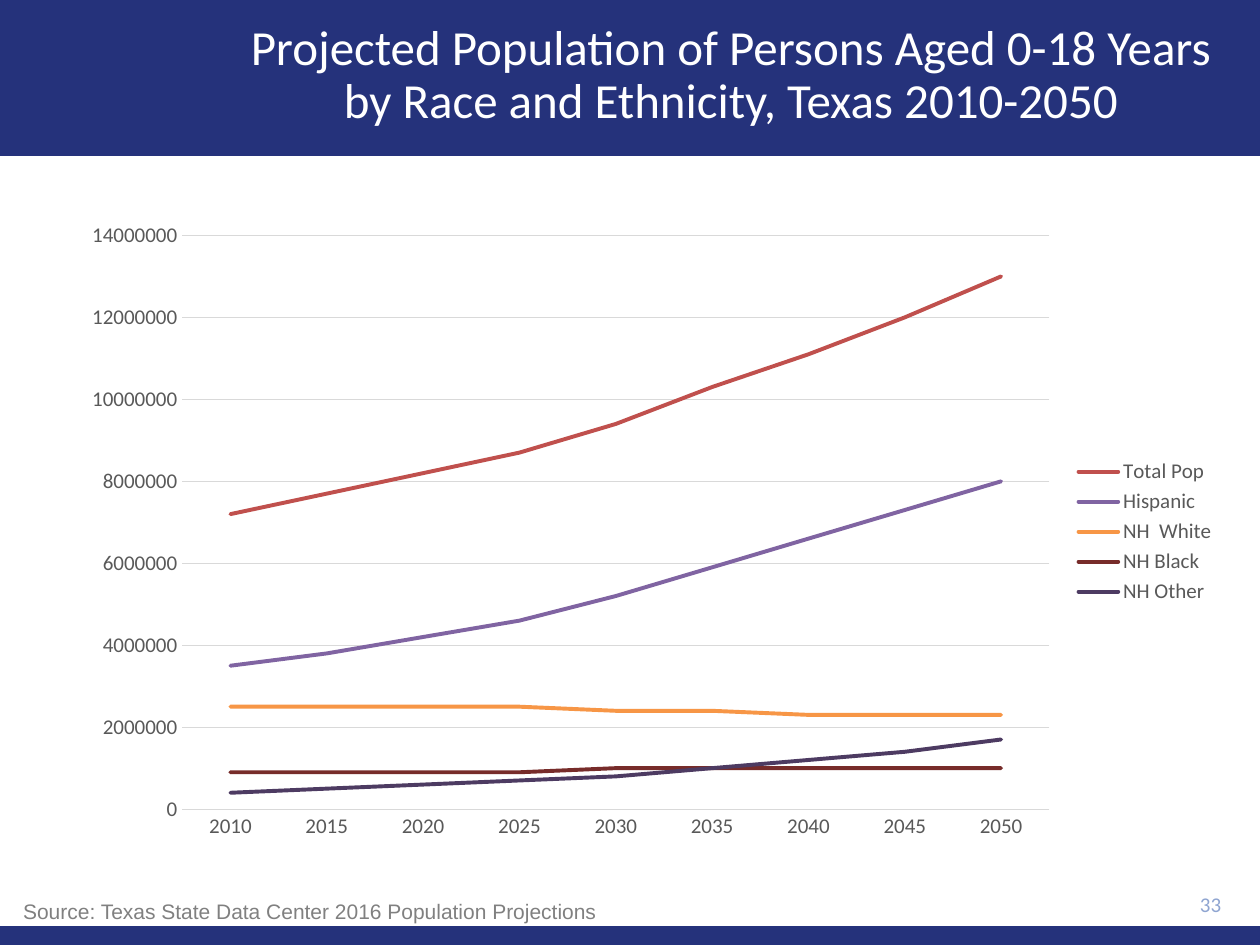
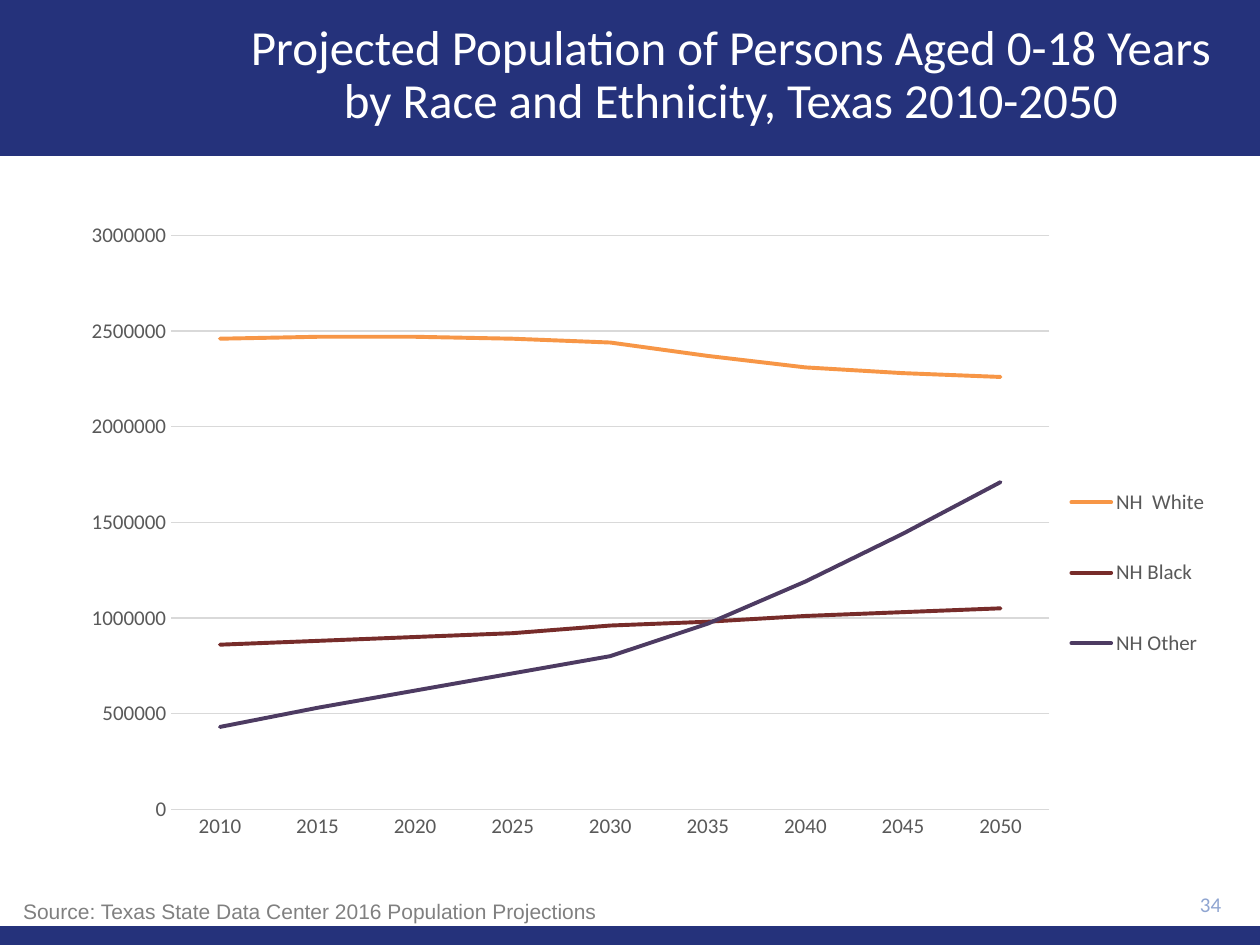
from lxml import etree
from pptx import Presentation
from pptx.chart.data import CategoryChartData
from pptx.dml.color import RGBColor
from pptx.enum.chart import XL_CHART_TYPE, XL_LEGEND_POSITION, XL_TICK_MARK
from pptx.enum.shapes import MSO_SHAPE
from pptx.enum.text import MSO_ANCHOR, MSO_AUTO_SIZE, PP_ALIGN
from pptx.oxml.ns import qn
from pptx.util import Inches, Pt

LINE = XL_CHART_TYPE.LINE
LEGEND_RIGHT = XL_LEGEND_POSITION.RIGHT
NO_TICK = XL_TICK_MARK.NONE
RECT = MSO_SHAPE.RECTANGLE
MIDDLE = MSO_ANCHOR.MIDDLE
LEFT, CENTER, RIGHT = PP_ALIGN.LEFT, PP_ALIGN.CENTER, PP_ALIGN.RIGHT

# Shared look; boxes are left, top, width, height in percent of the slide
NAVY, WHITE, GRID, LABEL = "25327B", "FFFFFF", "D9D9D9", "595959"
BANDS = [(0, 0, 100, 16.5), (0, 98, 100, 2)]
TITLE_BOX = (17, 1.4, 82, 13.33)
CHART_BOX = (5.4, 22.27, 92.5, 68)
NUMBER_BOX = (89, 93.4, 8.9, 4.53)
SOURCE_BOX = (0.85, 94.4, 95.8, 4)
TITLE = ("Projected Population of Persons Aged 0-18 Years "
         "by Race and Ethnicity, Texas 2010-2050")
SOURCE = "Source: Texas State Data Center 2016 Population Projections"

# Population in thousands, by group
YEARS = [str(year) for year in range(2010, 2051, 5)]
GROUPS = {
    "Total Pop": ("C0504D", [7200, 7700, 8200, 8700, 9400, 10300, 11100, 12000, 13000]),
    "Hispanic": ("8064A2", [3500, 3800, 4200, 4600, 5200, 5900, 6600, 7300, 8000]),
    "NH  White ": ("F79646", [2460, 2470, 2470, 2460, 2440, 2370, 2310, 2280, 2260]),
    "NH Black ": ("772C2A", [860, 880, 900, 920, 960, 980, 1010, 1030, 1050]),
    "NH Other ": ("4D3B62", [430, 530, 620, 710, 800, 970, 1190, 1440, 1710]),
}
NAMES = list(GROUPS)

# Page number, groups, rounding digits, axis top, axis step,
# plot layout, legend layout (layouts in percent of the chart)
PAGES = [
    (33, NAMES, -5, 14_000_000, 2_000_000, (9.8, 3.9, 74.4, 89.3), None),
    (34, NAMES[2:], -4, 3_000_000, 500_000, (8.85, 3.9, 75.35, 89.3),
     (85.5, 36.4, 13, 40)),
]

prs = Presentation()
prs.slide_width, prs.slide_height = Inches(10), Inches(7.5)
layout = prs.slide_layouts[5]


def rgb(color):
    return RGBColor.from_string(color)


def place(box):
    sizes = (prs.slide_width, prs.slide_height) * 2
    return [round(share * size / 100) for share, size in zip(box, sizes)]


# Only the title remains on the layout
for ph in list(layout.placeholders)[1:]:
    ph._element.getparent().remove(ph._element)

for number, names, digits, top, step, plot_layout, legend_layout in PAGES:
    s = prs.slides.add_slide(layout)

    # Bands, moved to the layout once
    if number == PAGES[0][0]:
        bands = [s.shapes.add_shape(RECT, *place(box)) for box in BANDS]
        for sp in bands:
            sp.shadow.inherit = False
            sp.fill.solid()
            sp.fill.fore_color.rgb = rgb(NAVY)
            sp.line.fill.background()
            layout.shapes._spTree.insert(2, sp._element)

    # Title
    sp = s.shapes.title
    sp.left, sp.top, sp.width, sp.height = place(TITLE_BOX)
    tf = sp.text_frame
    tf.text = TITLE
    tf.auto_size = MSO_AUTO_SIZE.NONE
    tf.vertical_anchor = MIDDLE
    p = tf.paragraphs[0]
    p.alignment, p.line_spacing = CENTER, 0.9
    p.font.name, p.font.size = "Calibri", Pt(28)
    p.font.color.rgb = rgb(WHITE)

    # Line chart
    data = CategoryChartData()
    data.categories = YEARS
    for name in names:
        data.add_series(name, [round(value * 1000, digits) for value in GROUPS[name][1]])
    chart = s.shapes.add_chart(LINE, *place(CHART_BOX), data).chart
    chart.has_title = False
    chart.font.name, chart.font.size = "Calibri", Pt(12)
    chart.font.color.rgb = rgb(LABEL)
    chart.plots[0].vary_by_categories = False
    for name, ser in zip(names, chart.plots[0].series):
        ser.smooth = False
        line = ser.format.line
        line.color.rgb = rgb(GROUPS[name][0])
        line.width = Pt(2.25)
        line._get_or_add_ln().set("cap", "rnd")

    # Axes
    cat, val = chart.category_axis, chart.value_axis
    for axis in (cat, val):
        axis.major_tick_mark = axis.minor_tick_mark = NO_TICK
    val.minimum_scale, val.maximum_scale, val.major_unit = 0, top, step
    val.has_major_gridlines = True
    val.format.line.fill.background()
    for line in (cat.format.line, val.major_gridlines.format.line):
        line.color.rgb = rgb(GRID)
        line.width = Pt(0.75)

    # Legend, and fixed places for plot and legend
    chart.has_legend = True
    legend = chart.legend
    legend.position = LEGEND_RIGHT
    legend.include_in_layout = False
    plot_area = chart._chartSpace.chart.plotArea
    for parent, index, target, shares in ((plot_area, 0, "inner", plot_layout),
                                          (legend._element, 1, None, legend_layout)):
        if not shares:
            continue
        for old in parent.findall(qn("c:layout")):
            parent.remove(old)
        spot = etree.Element(qn("c:layout"))
        manual = etree.SubElement(spot, qn("c:manualLayout"))
        settings = [("layoutTarget", target)] if target else []
        settings += [("xMode", "edge"), ("yMode", "edge")]
        settings += [(key, f"{share / 100:.4f}") for key, share in zip("xywh", shares)]
        for key, value in settings:
            etree.SubElement(manual, qn("c:" + key)).set("val", value)
        parent.insert(index, spot)

    # Page number and source
    for text, box, font, color, align in (
            (str(number), NUMBER_BOX, "Calibri", "8FA5D1", RIGHT),
            (SOURCE, SOURCE_BOX, "Arial", "808080", LEFT)):
        tf = s.shapes.add_textbox(*place(box)).text_frame
        tf.word_wrap = True
        tf.vertical_anchor = MIDDLE
        tf.text = text
        p = tf.paragraphs[0]
        p.alignment = align
        p.font.name, p.font.size = font, Pt(12)
        p.font.color.rgb = rgb(color)

prs.save("out.pptx")
